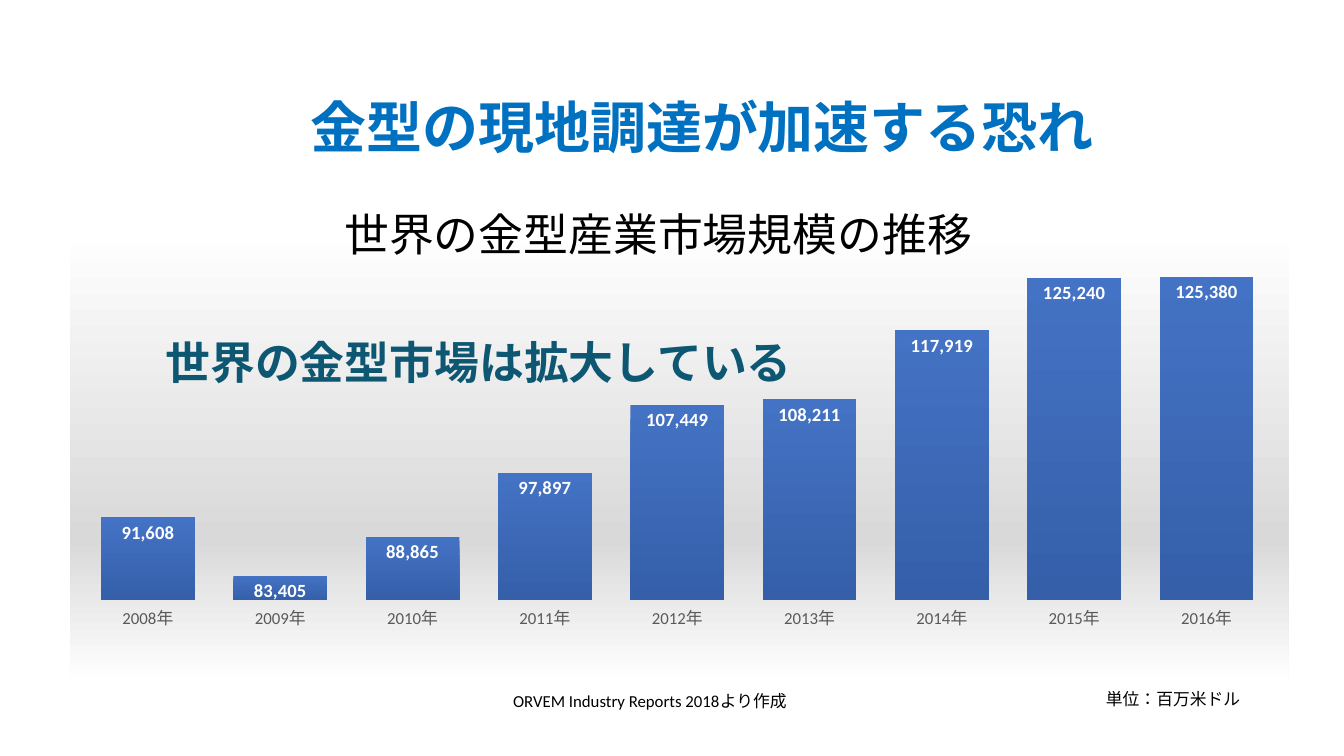
from dataclasses import dataclass

from lxml.etree import SubElement
from pptx import Presentation
from pptx.chart.data import CategoryChartData
from pptx.dml.color import RGBColor
from pptx.enum.chart import XL_CHART_TYPE, XL_LABEL_POSITION, XL_TICK_MARK
from pptx.enum.lang import MSO_LANGUAGE_ID
from pptx.enum.shapes import MSO_SHAPE
from pptx.enum.text import MSO_ANCHOR, MSO_AUTO_SIZE, PP_ALIGN
from pptx.oxml import parse_xml
from pptx.oxml.ns import nsdecls, qn
from pptx.util import Inches, Pt


@dataclass(frozen=True)
class Theme:
    """Colours, fonts and type sizes of the slide."""
    black: str = "000000"
    white: str = "FFFFFF"
    headline: str = "0070C0"
    message: str = "0E5772"
    axis: str = "595959"
    panel: tuple = ((0, "FFFFFF"), (68, "D9D9D9"), (100, "FFFFFF"))
    bars: tuple = ((0, "4472C4"), (100, "355FA9"))
    font: str = "Calibri"
    headline_font: str = "TeX Gyre Adventor"
    headline_size: float = 40
    title_size: float = 32
    label_size: float = 13.3
    note_size: float = 12
    chart_size: float = 10


THEME = Theme()
MILLION = 10**6
FIRST_YEAR = 2008
MARKET = (91608, 83405, 88865, 97897, 107449, 108211, 117919, 125240, 125380)
PLOT = {"x": 0.01, "y": 0.034, "w": 0.977, "h": 0.783}


def style_font(font, size, color, bold=False, name=THEME.font):
    """Set the size, colour, weight and typeface of a font."""
    font.size, font.bold, font.name = Pt(size), bold, name
    font.color.rgb = RGBColor.from_string(color)


def gradient(stops):
    """Return a top-to-bottom gradient fill element."""
    marks = "".join(
        f'<a:gs pos="{at * 1000}"><a:srgbClr val="{color}"/></a:gs>' for at, color in stops)
    return parse_xml(f'<a:gradFill {nsdecls("a")} rotWithShape="1"><a:gsLst>{marks}</a:gsLst>'
                     '<a:lin ang="5400000" scaled="0"/></a:gradFill>')


def write(sp, text, size, color, align=PP_ALIGN.LEFT, **font):
    """Put one styled paragraph into a shape and return the paragraph."""
    tf = sp.text_frame
    tf.text = text
    p = tf.paragraphs[0]
    p.alignment = align
    r = p.runs[0]
    style_font(r.font, size, color, **font)
    r.font.language_id = MSO_LANGUAGE_ID.JAPANESE
    return p


def add_line(slide, box, text, size, color, **font):
    """Add an unwrapped text box that fits its line."""
    sp = slide.shapes.add_textbox(*map(Inches, box))
    sp.text_frame.word_wrap = False
    sp.text_frame.auto_size = MSO_AUTO_SIZE.SHAPE_TO_FIT_TEXT
    write(sp, text, size, color, **font)


def add_title(slide, box, text):
    """Add the centred chart title."""
    sp = slide.shapes.add_textbox(*map(Inches, box))
    sp.text_frame.word_wrap = True
    sp.text_frame.vertical_anchor = MSO_ANCHOR.MIDDLE
    write(sp, text, THEME.title_size, THEME.black, PP_ALIGN.CENTER).line_spacing = 0.9


def add_message(slide, box, text):
    """Add the bold message in an unfilled rounded rectangle."""
    sp = slide.shapes.add_shape(MSO_SHAPE.ROUNDED_RECTANGLE, *map(Inches, box))
    sp.shadow.inherit = False
    sp.fill.background()
    sp.line.fill.background()
    sp.text_frame.vertical_anchor = MSO_ANCHOR.MIDDLE
    write(sp, text, THEME.title_size, THEME.message, PP_ALIGN.CENTER, bold=True)


def set_plot_layout(chart):
    """Fix the inner plot area as fractions of the chart."""
    area = chart.plots[0]._element.getparent()
    for old in area.findall(qn("c:layout")):
        area.remove(old)
    layout = parse_xml(f'<c:layout {nsdecls("c")}/>')
    manual = SubElement(layout, qn("c:manualLayout"))
    settings = {"layoutTarget": "inner", "xMode": "edge", "yMode": "edge", **PLOT}
    for tag, value in settings.items():
        SubElement(manual, qn(f"c:{tag}")).set("val", str(value))
    area.insert(0, layout)


def add_market_chart(slide, box):
    """Add the column chart of the market size by year."""
    data = CategoryChartData(number_format="#,##0,,")
    data.categories = [f"{FIRST_YEAR + i}年" for i in range(len(MARKET))]
    data.add_series("Series 1", [value * MILLION for value in MARKET])
    chart = slide.shapes.add_chart(
        XL_CHART_TYPE.COLUMN_CLUSTERED, *map(Inches, box), data).chart
    chart.has_title = chart.has_legend = False
    style_font(chart.font, THEME.chart_size, THEME.black)

    panel = parse_xml(f'<c:spPr {nsdecls("c", "a")}><a:ln><a:noFill/></a:ln></c:spPr>')
    panel.insert(0, gradient(THEME.panel))
    chart._chartSpace.find(qn("c:chart")).addnext(panel)
    set_plot_layout(chart)

    years, values = chart.category_axis, chart.value_axis
    years.major_tick_mark = years.minor_tick_mark = XL_TICK_MARK.NONE
    years.format.line.fill.background()
    style_font(years.tick_labels.font, THEME.note_size, THEME.axis)
    values.visible = values.has_major_gridlines = False
    values.minimum_scale, values.maximum_scale = 80000 * MILLION, 130000 * MILLION

    plot = chart.plots[0]
    plot.gap_width, plot.vary_by_categories = 41, False
    series = plot.series[0]
    series.invert_if_negative = False
    series._element.get_or_add_spPr().insert(0, gradient(THEME.bars))
    labels = series.data_labels
    labels.show_value = True
    labels.position = XL_LABEL_POSITION.INSIDE_END
    labels.number_format, labels.number_format_is_linked = "#,##0,,", False
    style_font(labels.font, THEME.label_size, THEME.white, bold=True)


def build_slide(prs):
    """Build the market growth slide."""
    slide = prs.slides.add_slide(prs.slide_layouts[6])
    add_market_chart(slide, (0.69, 2.27, 12.09, 4.51))
    add_line(slide, (10.87, 6.78, 1.55, 0.3), "単位：百万米ドル", THEME.note_size, THEME.black)
    add_line(slide, (4.99, 6.8, 3.08, 0.3), "ORVEM Industry Reports 2018より作成",
             THEME.note_size, THEME.black)
    add_message(slide, (0.94, 3.2, 7.62, 0.77), "世界の金型市場は拡大している")
    add_line(slide, (2.98, 0.87, 8.06, 0.77), "金型の現地調達が加速する恐れ",
             THEME.headline_size, THEME.headline, bold=True, name=THEME.headline_font)
    add_title(slide, (0.78, 2.04, 11.5, 0.62), "世界の金型産業市場規模の推移")


def main():
    """Create and save the presentation."""
    prs = Presentation()
    prs.slide_width, prs.slide_height = Inches(13.33), Inches(7.5)
    build_slide(prs)
    prs.save("out.pptx")


if __name__ == "__main__":
    main()
